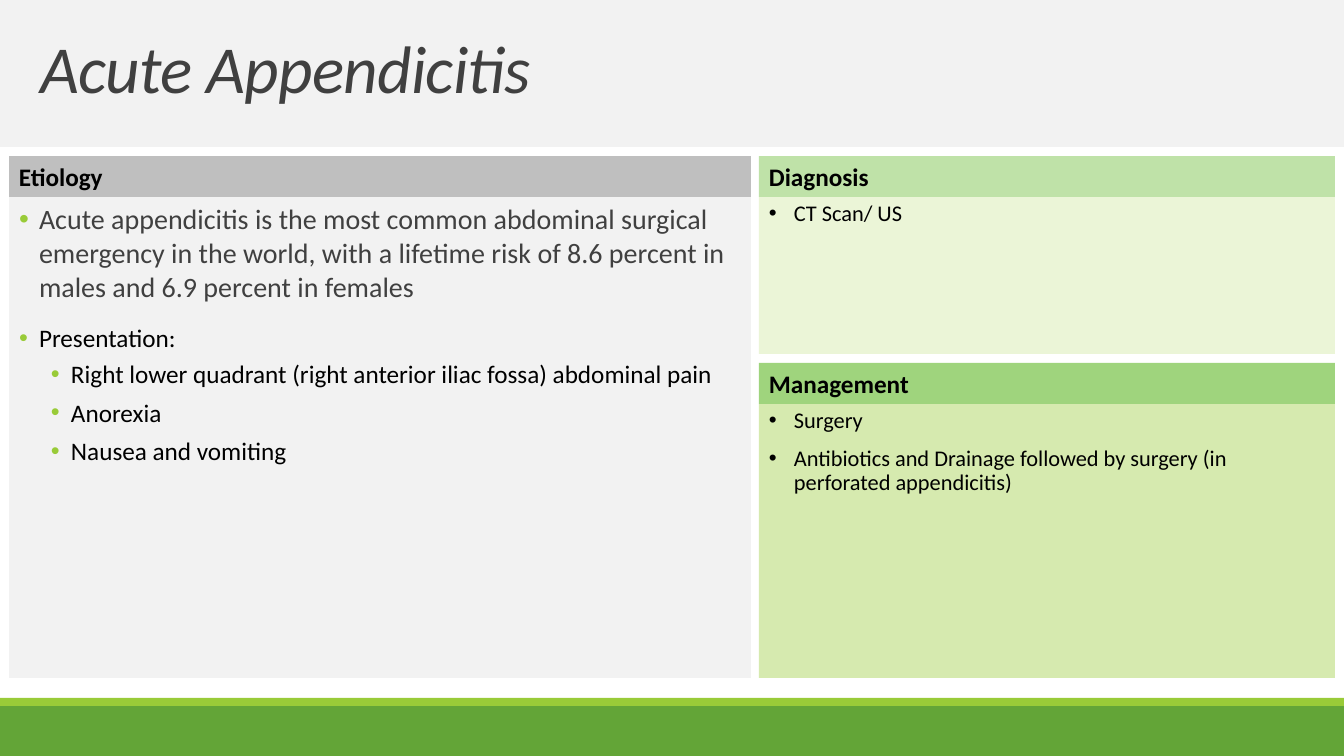
from lxml import etree
from pptx import Presentation, util as u
from pptx.dml.color import RGBColor
from pptx.enum import shapes, text
from pptx.oxml.ns import qn

EMU_PER_PX = 914400 / 100.8
COLORS = {
    "black": "000000", "title_text": "404040", "pale_gray": "F2F2F2", "gray": "BFBFBF",
    "lime": "99CB38", "green": "63A537",
    "diagnosis_header": "BFE2A8", "diagnosis": "EBF5D7",
    "management_header": "9FD47D", "management": "D6EAAF",
}
HEADER_HEIGHT = 41


def px(value):
    return u.Emu(round(value * EMU_PER_PX))


def rgb(name):
    return RGBColor.from_string(COLORS[name])


def place(shape, box):
    for name, value in zip(("left", "top", "width", "height"), box):
        setattr(shape, name, px(value))


def paint(shape, color):
    shape.fill.solid()
    shape.fill.fore_color.rgb = rgb(color)
    shape.line.fill.background()


def add_block(slide, box, color):
    shape = slide.shapes.add_shape(shapes.MSO_SHAPE.RECTANGLE, *map(px, box))
    shape.shadow.inherit = False
    paint(shape, color)
    return shape


def set_indent(paragraph, margin, hanging=0):
    properties = paragraph._p.get_or_add_pPr()
    properties.set("marL", str(px(margin)))
    properties.set("indent", str(px(-hanging)))
    return properties


def add_bullet(paragraph, margin, hanging, color):
    properties = set_indent(paragraph, margin, hanging)
    bullet_color = etree.SubElement(properties, qn("a:buClr"))
    etree.SubElement(bullet_color, qn("a:srgbClr"), val=COLORS[color])
    etree.SubElement(properties, qn("a:buFont"), typeface="Arial")
    etree.SubElement(properties, qn("a:buChar"), char="•")


def write(paragraph, words, size, color="black", **formats):
    paragraph.alignment = text.PP_ALIGN.LEFT
    run = paragraph.add_run()
    run.text = words
    run.font.color.rgb = rgb(color)
    for name, value in {"name": "Calibri", "size": u.Pt(size), **formats}.items():
        setattr(run.font, name, value)
    return run


def add_title(slide, words):
    title = slide.shapes.title
    place(title, (0, -1, 1344, 148))
    paint(title, "pale_gray")
    frame = title.text_frame
    frame.auto_size = text.MSO_AUTO_SIZE.NONE
    frame.vertical_anchor = text.MSO_ANCHOR.MIDDLE
    paragraph = frame.paragraphs[0]
    paragraph.line_spacing = 0.85
    set_indent(paragraph, 30)
    run = write(paragraph, words, 48, "title_text", italic=True)
    run._r.get_or_add_rPr().set("spc", "-50")


def add_header(slide, box, color, words):
    frame = add_block(slide, box, color).text_frame
    frame.word_wrap = True
    write(frame.paragraphs[0], words, 18, bold=True)


def add_list(slide, box, color, items, side_inset=10):
    """Each item is (words, size, text color, bullet style)."""
    frame = add_block(slide, box, color).text_frame
    frame.word_wrap = True
    frame.vertical_anchor = text.MSO_ANCHOR.TOP
    frame.margin_left = frame.margin_right = px(side_inset)
    for index, (words, size, text_color, style) in enumerate(items):
        paragraph = frame.add_paragraph() if index else frame.paragraphs[0]
        add_bullet(paragraph, *style["bullet"])
        for name, value in style["spacing"].items():
            if index or name != "space_before":
                setattr(paragraph, name, value)
        write(paragraph, words, size, text_color)


def add_panel(slide, box, header_color, color, heading, items, side_inset=10):
    left, top, width, height = box
    body = (left, top + HEADER_HEIGHT, width, height - HEADER_HEIGHT)
    add_list(slide, body, color, items, side_inset)
    add_header(slide, (left, top, width, HEADER_HEIGHT), header_color, heading)


def main():
    presentation = Presentation()
    presentation.slide_width, presentation.slide_height = px(1344), px(756)
    slide = presentation.slides.add_slide(presentation.slide_layouts[5])

    add_block(slide, (0, 706, 1344, 50), "green")
    add_block(slide, (0, 698, 1344, 8), "lime")
    add_title(slide, "Acute Appendicitis")

    main_point = {"bullet": (30, 20, "lime"),
                  "spacing": {"space_before": u.Pt(12), "space_after": u.Pt(2)}}
    sub_point = {"bullet": (62, 20, "lime"),
                 "spacing": {"space_before": u.Pt(2), "space_after": u.Pt(4)}}
    side_point = {"bullet": (25, 25, "black"),
                  "spacing": {"space_before": u.Pt(10), "line_spacing": 0.9}}

    symptoms = ("Right lower quadrant (right anterior iliac fossa) abdominal pain",
                "Anorexia", "Nausea and vomiting")
    etiology = [
        ("Acute appendicitis is the most common abdominal surgical emergency in the world, "
         "with a lifetime risk of 8.6 percent in males and 6.9 percent in females",
         20, "title_text", main_point),
        ("Presentation:", 18, "black", main_point),
        *((symptom, 18, "black", sub_point) for symptom in symptoms),
    ]
    add_panel(slide, (9, 156, 742, 522), "gray", "pale_gray", "Etiology", etiology, side_inset=0)

    side_panels = (
        ("Diagnosis", 156, 198, ("CT Scan/ US",)),
        ("Management", 363, 315, (
            "Surgery",
            "Antibiotics and Drainage followed by surgery (in perforated appendicitis)")),
    )
    for heading, top, height, points in side_panels:
        color = heading.lower()
        items = [(point, 16, "black", side_point) for point in points]
        add_panel(slide, (759, top, 576, height), f"{color}_header", color, heading, items)

    presentation.save("out.pptx")


if __name__ == "__main__":
    main()
